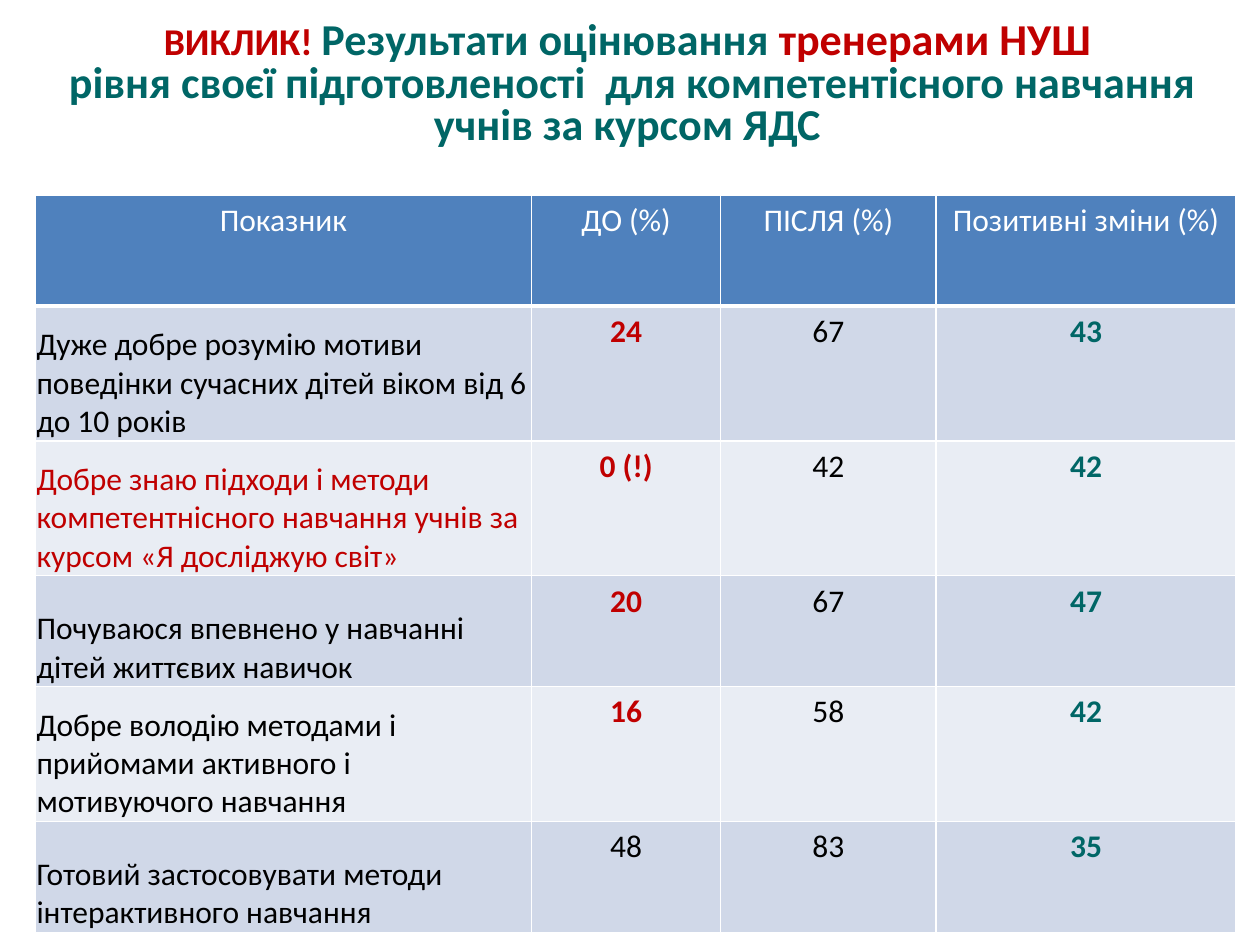
from lxml import etree
from pptx import Presentation, util as u
from pptx.dml.color import RGBColor
from pptx.enum import text as t
from pptx.oxml.ns import qn

RED, TEAL, BLACK, WHITE = "C00000", "006666", "000000", "FFFFFF"
BLUE, BANDS = "4F81BD", ("D0D8E8", "E9EDF4")


def color(code):
    return RGBColor.from_string(code)


class Deck:
    """Holds the text style and the current slide."""

    style = {"name": "Calibri", "size": u.Pt(18), "bold": False}

    def __init__(self, wide, high):
        self.file = Presentation()
        self.file.slide_width = u.Inches(wide)
        self.file.slide_height = u.Inches(high)
        self.slide = self.file.slides.add_slide(self.file.slide_layouts[6])
        back = self.slide.background.fill
        back.solid()
        back.fore_color.rgb = color(WHITE)

    def run(self, para, words, ink, **more):
        font = para.add_run()
        font.text = words
        font = font.font
        for key, value in {**self.style, **more}.items():
            setattr(font, key, value)
        font.color.rgb = color(ink)

    def title(self, box, lines):
        frame = self.slide.shapes.add_textbox(*map(u.Inches, box)).text_frame
        frame.word_wrap = True
        frame.vertical_anchor = t.MSO_ANCHOR.MIDDLE
        para = frame.paragraphs[0]
        para.alignment = t.PP_ALIGN.CENTER
        para.line_spacing = 0.8
        for i, line in enumerate(lines):
            if i:
                para.add_line_break()
            for words, ink, size in line:
                self.run(para, words, ink, size=u.Pt(size), bold=True)

    def edges(self, cell, bottom):
        props = cell._tc.get_or_add_tcPr()
        for side, width in (("L", 1), ("R", 1), ("T", 1), ("B", bottom)):
            line = etree.SubElement(props, qn("a:ln" + side), w=str(u.Pt(width)))
            fill = etree.SubElement(line, qn("a:solidFill"))
            etree.SubElement(fill, qn("a:srgbClr"), val=WHITE)

    def cell(self, cell, words, ink, fill, bold=False, label=False, bottom=1):
        self.edges(cell, bottom)
        cell.fill.solid()
        cell.fill.fore_color.rgb = color(fill)
        para = cell.text_frame.paragraphs[0]
        para.alignment = t.PP_ALIGN.LEFT if label else t.PP_ALIGN.CENTER
        if label:
            cell.vertical_anchor = t.MSO_ANCHOR.BOTTOM
            cell.margin_left = cell.margin_right = cell.margin_top = u.Inches(0.01)
            cell.margin_bottom = 0
        self.run(para, words, ink, bold=bold)

    def table(self, left, top, cols, rows):
        grid = self.slide.shapes.add_table(
            len(rows), len(cols), u.Inches(left), u.Inches(top),
            u.Inches(sum(cols)), u.Inches(sum(rows))).table
        for part, size in zip(grid.columns, cols):
            part.width = u.Inches(size)
        for part, size in zip(grid.rows, rows):
            part.height = u.Inches(size)
        return grid


HEADS = ("Показник", "ДО (%)", "ПІСЛЯ (%)", "Позитивні зміни (%)")
# Label, its colour, before, after, change
ROWS = (
    ("Дуже добре розумію мотиви поведінки сучасних дітей віком від 6 до 10 років",
     BLACK, "24", "67", "43"),
    ("Добре знаю підходи і методи компетентнісного навчання учнів за курсом "
     "«Я досліджую світ»", RED, "0 (!)", "42", "42"),
    ("Почуваюся впевнено у навчанні дітей життєвих навичок",
     BLACK, "20", "67", "47"),
    ("Добре володію методами і прийомами активного і мотивуючого навчання",
     BLACK, "16", "58", "42"),
    ("Готовий застосовувати методи інтерактивного навчання",
     BLACK, "48", "83", "35"),
)


def main():
    deck = Deck(10, 7.5)

    # Results table
    low, tall = 0.88, 1.07
    grid = deck.table(0.28, 1.55, (3.94, 1.5, 1.71, 2.38),
                      (low, tall, tall, low, tall, low))
    for c, head in enumerate(HEADS):
        deck.cell(grid.cell(0, c), head, WHITE, BLUE, bottom=3)
    for r, (label, ink, before, after, change) in enumerate(ROWS, 1):
        fill = BANDS[(r - 1) % 2]
        weak = r < len(ROWS)  # low starting scores stand out in red
        deck.cell(grid.cell(r, 0), label, ink, fill, label=True)
        deck.cell(grid.cell(r, 1), before, RED if weak else BLACK, fill, bold=weak)
        deck.cell(grid.cell(r, 2), after, BLACK, fill)
        deck.cell(grid.cell(r, 3), change, TEAL, fill, bold=True)

    # Title
    deck.title((0.08, 0.13, 9.8, 1.1), (
        (("ВИКЛИК! ", RED, 21.6), ("Результати оцінювання ", TEAL, 25.2),
         ("тренерами НУШ", RED, 25.2)),
        ((" рівня своєї підготовленості  для компетентісного навчання "
          "учнів за курсом ЯДС", TEAL, 25.2),),
    ))

    deck.file.save("out.pptx")


if __name__ == "__main__":
    main()
